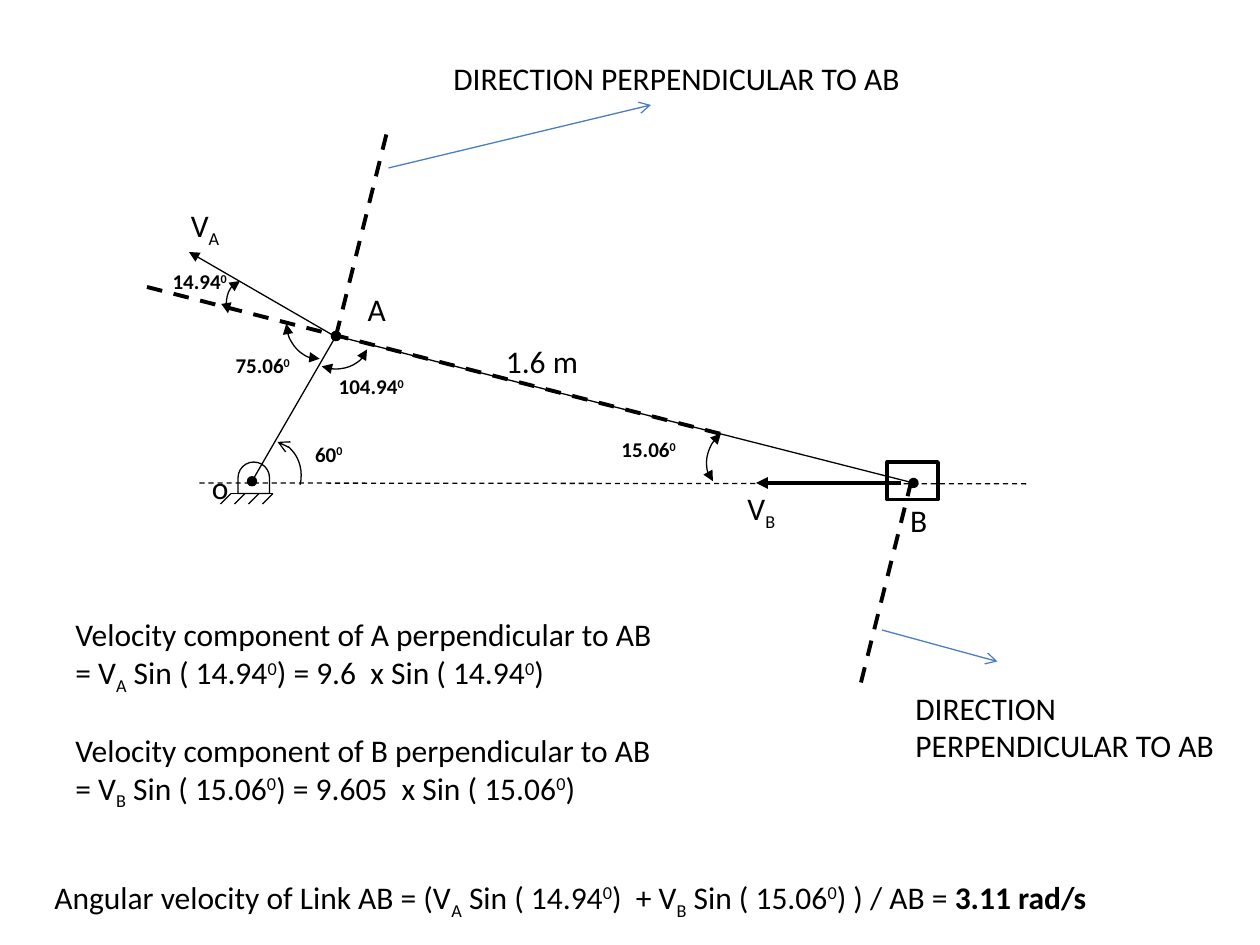
"""Build the velocity diagram of a slider-crank mechanism with its angular velocity result."""
from dataclasses import dataclass

from pptx import Presentation
from pptx.dml.color import RGBColor
from pptx.enum.dml import MSO_LINE
from pptx.enum.shapes import MSO_CONNECTOR, MSO_SHAPE
from pptx.enum.text import MSO_AUTO_SIZE
from pptx.oxml.ns import qn
from pptx.util import Pt
from lxml.etree import SubElement


@dataclass(frozen=True)
class Theme:
    ink: RGBColor = RGBColor(0x00, 0x00, 0x00)
    pointer: RGBColor = RGBColor(0x4B, 0x7E, 0xBC)
    font: str = "Calibri"
    body: int = 18
    angle: int = 12
    thin: float = 0.75
    box: float = 2
    thick: float = 2.25


THEME = Theme()


def style_line(part, color=THEME.ink, width=THEME.thin, dash=None, head=None, tail=None):
    part.line.color.rgb = color
    part.line.width = Pt(width)
    if dash:
        part.line.dash_style = dash
    outline = part.element.spPr.find(qn("a:ln"))
    for tag, end in (("a:headEnd", head), ("a:tailEnd", tail)):
        if end:
            SubElement(outline, qn(tag), type=end)


def add_line(start, end, **style):
    stroke = slide.shapes.add_connector(
        MSO_CONNECTOR.STRAIGHT, *(Pt(value) for value in (*start, *end)))
    style_line(stroke, **style)
    SubElement(stroke.element.spPr, qn("a:effectLst"))


deck = Presentation()
deck.slide_width, deck.slide_height = Pt(720), Pt(540)
slide = deck.slides.add_slide(deck.slide_layouts[6])

crank_centre, crank_pin, slider_pin = (144, 275), (192, 192), (522, 276)
ground_left, ground_y, hatch_gap, hatch_size = 132, 282, 8, 6
pins = dict(head="oval", tail="oval")
heavy_dash = dict(width=THEME.thick, dash=MSO_LINE.DASH)
pointer = dict(color=THEME.pointer, tail="arrow")

add_line((ground_left, ground_y), (ground_left + 3 * hatch_gap, ground_y))
for hatch in range(4):
    hatch_x = ground_left + hatch * hatch_gap
    add_line((hatch_x - hatch_size, ground_y + hatch_size), (hatch_x, ground_y))

for start, end, style in (
    (crank_centre, crank_pin, pins),
    (crank_pin, slider_pin, pins),
    ((114, 276), (588, 276.5), dict(dash=MSO_LINE.DASH)),
    ((191, 192), (108, 144), dict(tail="triangle")),
    ((84, 164), (414, 248.5), heavy_dash),
    ((515, 276), (432, 276), dict(width=THEME.thick, tail="triangle")),
    (crank_pin, (222, 72), heavy_dash),
    ((222, 96), (372, 60), pointer),
    ((492, 390), (522, 270), heavy_dash),
    ((504, 360), (570, 378), pointer),
):
    add_line(start, end, **style)

both_ends = dict(head="triangle", tail="triangle")
for kind, place, rotation, style in (
    (MSO_SHAPE.FLOWCHART_DELAY, (136, 264, 18, 18), 270, {}),
    (MSO_SHAPE.RECTANGLE, (507, 264, 29, 21.5), 0, dict(width=THEME.box)),
    (MSO_SHAPE.ARC, (136, 252, 36, 42), 12.7, dict(head="arrow")),
    (MSO_SHAPE.ARC, (405.5, 240.5, 36, 42), 230.1, both_ends),
    (MSO_SHAPE.ARC, (172, 171.5, 36, 42), 110.1, both_ends),
    (MSO_SHAPE.ARC, (163.5, 163, 36, 42), 176.9, both_ends),
    (MSO_SHAPE.ARC, (126.5, 163, 31, 24.5), 252, both_ends),
):
    outline_part = slide.shapes.add_shape(kind, *(Pt(value) for value in place))
    outline_part.rotation = rotation
    outline_part.shadow.inherit = False
    outline_part.fill.background()
    style_line(outline_part, **style)

offsets = {"_": "-25000", "^": "30000"}
labels = [
    ((114, 264, 24.5, 29), THEME.body, ["o"]),
    ((203, 162, 25, 29), THEME.body, ["A"]),
    ((513, 283, 24.5, 29), THEME.body, ["B"]),
    ((282, 192, 56, 29), THEME.body, ["1.6 m"]),
    ((102, 114, 31, 29), THEME.body, ["V|_A"]),
    ((420, 276, 32, 29), THEME.body, ["V|_B"]),
    ((252, 30, 272, 29), THEME.body, ["DIRECTION PERPENDICULAR TO AB"]),
    ((516, 390, 204, 51), THEME.body, ["DIRECTION PERPENDICULAR TO AB"]),
    ((24, 498, 617, 29), THEME.body, [
        "Angular velocity of Link AB = (V|_A| Sin ( 14.94|^0|)  + V|_B"
        "| Sin ( 15.06|^0|) ) / AB = |*3.11 rad/s"]),
]
for left, top, width, angle in (
    (173, 248.5, 31, "60"),
    (348, 246, 46, "15.06"),
    (186.5, 210, 52.5, "104.94"),
    (127.5, 198, 46, "75.06"),
    (91.5, 150, 46, "14.94"),
):
    labels.append(((left, top, width, 21.5), THEME.angle, [f"*{angle}|^0"]))
for top, point, speed, angle in ((348, "A", "9.6", "14.94"), (414, "B", "9.605", "15.06")):
    labels.append(((36, top, 348, 51), THEME.body, [
        f"Velocity component of {point} perpendicular to AB",
        f"= V|_{point}| Sin ( {angle}|^0|) = {speed}  x Sin ( {angle}|^0|)"]))

for place, size, lines in labels:
    label = slide.shapes.add_textbox(*(Pt(value) for value in place))
    frame = label.text_frame
    frame.word_wrap = place[0] == 516
    frame.auto_size = MSO_AUTO_SIZE.SHAPE_TO_FIT_TEXT
    frame.text = "\n".join(lines)
    for paragraph, line in zip(frame.paragraphs, lines):
        paragraph.text = ""
        for piece in line.split("|"):
            run = paragraph.add_run()
            run.text = piece.lstrip("_^*")
            run.font.name = THEME.font
            run.font.size = Pt(size)
            run.font.color.rgb = THEME.ink
            run.font.bold = size == THEME.angle or piece[0] == "*"
            if piece[0] in offsets:
                run.font._element.set("baseline", offsets[piece[0]])

deck.save("out.pptx")
